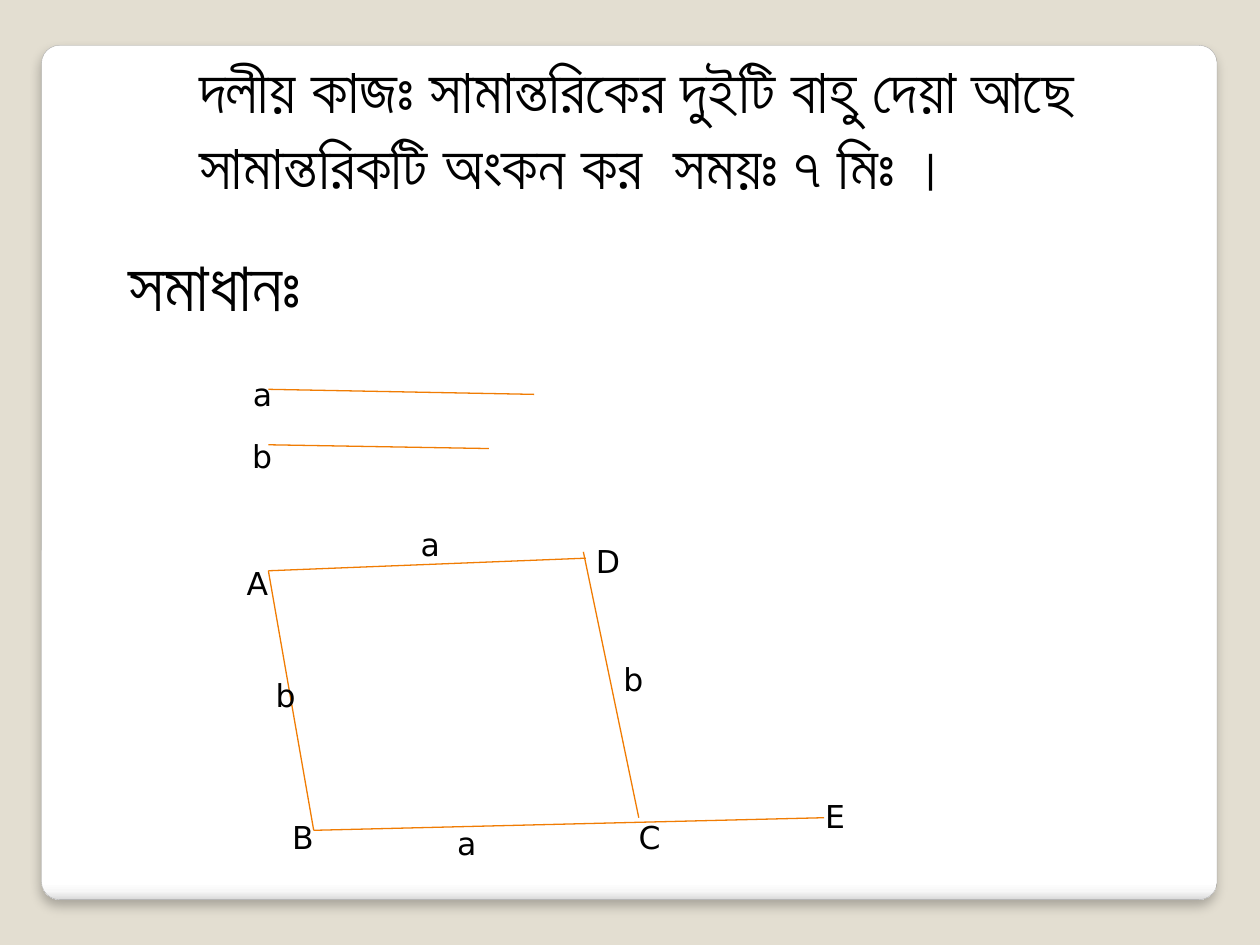
from lxml import etree
from pptx import Presentation
from pptx.dml.color import RGBColor
from pptx.enum.shapes import MSO_CONNECTOR, MSO_SHAPE
from pptx.enum.text import MSO_ANCHOR, MSO_AUTO_SIZE, PP_ALIGN
from pptx.oxml import parse_xml
from pptx.oxml.ns import nsdecls, qn
from pptx.util import Inches, Pt

BACKGROUND = RGBColor(0xE3, 0xDE, 0xD1)
PANEL_EDGE = RGBColor(0xA4, 0xA4, 0xA4)
PANEL_STOPS = [
    (0, RGBColor(0xFF, 0xFF, 0xFF)),
    (98, RGBColor(0xFF, 0xFF, 0xFF)),
    (99, RGBColor(0xF7, 0xF7, 0xF7)),
    (100, RGBColor(0xDA, 0xDA, 0xDA)),
]
ORANGE = RGBColor(0xF0, 0x7C, 0x03)
BLACK = RGBColor(0, 0, 0)
BENGALI_FONT = "Roboto"
LABEL_FONT = "DejaVu Sans"


def write_text(frame, text, font=LABEL_FONT, size=18, color=BLACK):
    """Put one left-aligned, top-anchored run in a text frame."""
    frame.word_wrap = True
    frame.auto_size = MSO_AUTO_SIZE.NONE
    frame.vertical_anchor = MSO_ANCHOR.TOP
    paragraph = frame.paragraphs[0]
    paragraph.alignment = PP_ALIGN.LEFT
    run = paragraph.add_run()
    run.text = text
    run.font.name = font
    run.font.size = Pt(size)
    run.font.color.rgb = color
    # Bengali takes its face from the complex-script font
    etree.SubElement(run.font._element, qn("a:cs")).set("typeface", font)


class GeometrySlide:
    def __init__(self, presentation):
        self.slide = presentation.slides.add_slide(presentation.slide_layouts[5])
        self.shapes = self.slide.shapes
        fill = self.slide.background.fill
        fill.solid()
        fill.fore_color.rgb = BACKGROUND

    def panel(self, left, top, width, height):
        panel = self.shapes.add_shape(
            MSO_SHAPE.ROUNDED_RECTANGLE,
            Inches(left), Inches(top), Inches(width), Inches(height))
        panel.adjustments[0] = 0.021
        panel.line.color.rgb = PANEL_EDGE
        panel.line.width = Pt(0.16)
        stops = "".join(
            f'<a:gs pos="{position * 1000}"><a:srgbClr val="{color}"/></a:gs>'
            for position, color in PANEL_STOPS)
        properties = panel._element.spPr
        properties.find(qn("a:prstGeom")).addnext(parse_xml(
            f'<a:gradFill {nsdecls("a")}><a:gsLst>{stops}</a:gsLst>'
            '<a:lin ang="5400000" scaled="0"/></a:gradFill>'))
        properties.append(parse_xml(
            f'<a:effectLst {nsdecls("a")}>'
            f'<a:outerShdw blurRad="{Pt(6)}" dist="{Pt(4)}" dir="5400000" rotWithShape="0">'
            '<a:srgbClr val="000000"><a:alpha val="25000"/></a:srgbClr>'
            '</a:outerShdw></a:effectLst>'))
        # Behind the title placeholder
        self.shapes._spTree.insert(2, panel._element)

    def title(self, text, left, top, width, height, **style):
        title = self.shapes.title
        title.left, title.top = Inches(left), Inches(top)
        title.width, title.height = Inches(width), Inches(height)
        write_text(title.text_frame, text, **style)

    def text(self, text, left, top, width, height=0.4, **style):
        box = self.shapes.add_textbox(
            Inches(left), Inches(top), Inches(width), Inches(height))
        write_text(box.text_frame, text, **style)

    def segment(self, start, end):
        line = self.shapes.add_connector(
            MSO_CONNECTOR.STRAIGHT, *(Inches(value) for value in start + end))
        line.line.color.rgb = ORANGE
        line.line.width = Pt(0.75)
        etree.SubElement(line._element.spPr, qn("a:effectLst"))


def main():
    presentation = Presentation()
    presentation.slide_width = Inches(10)
    presentation.slide_height = Inches(7.5)
    page = GeometrySlide(presentation)
    page.panel(0.33, 0.36, 9.33, 6.78)

    # Task and solution heading
    page.title("দলীয় কাজঃ সামান্তরিকের দুইটি বাহু দেয়া আছে সামান্তরিকটি অংকন কর  সময়ঃ ৭ মিঃ ।",
               1.48, 0.35, 8.37, 1.31, font=BENGALI_FONT, size=36)
    page.text("সমাধানঃ", 0.92, 1.87, 2.07, 0.77, font=BENGALI_FONT, size=40)

    # Given sides a and b, then the parallelogram on ray BE
    corner_a, corner_b = (2.13, 4.53), (2.49, 6.59)
    segments = [
        ((2.13, 3.09), (4.24, 3.13)),
        ((2.13, 3.53), (3.88, 3.56)),
        (corner_b, (6.54, 6.49)),
        ((5.07, 6.49), (4.63, 4.38)),
        (corner_b, corner_a),
        (corner_a, (4.65, 4.43)),
    ]
    for start, end in segments:
        page.segment(start, end)

    # Labels: text, left, top, width
    labels = [
        # Given sides
        ("a", 1.91, 2.93, 0.43), ("b", 1.91, 3.42, 0.19),
        # Points
        ("B", 2.22, 6.44, 0.73), ("C", 4.97, 6.44, 0.69),
        ("A", 1.86, 4.43, 0.32), ("D", 4.63, 4.25, 0.75),
        ("E", 6.45, 6.28, 1.16),
        # Sides of the parallelogram
        ("a", 3.53, 6.49, 0.87), ("a", 3.24, 4.12, 0.73),
        ("b", 4.85, 5.19, 0.9), ("b", 2.09, 5.32, 0.24),
    ]
    for label in labels:
        page.text(*label)

    presentation.save("out.pptx")


if __name__ == "__main__":
    main()
